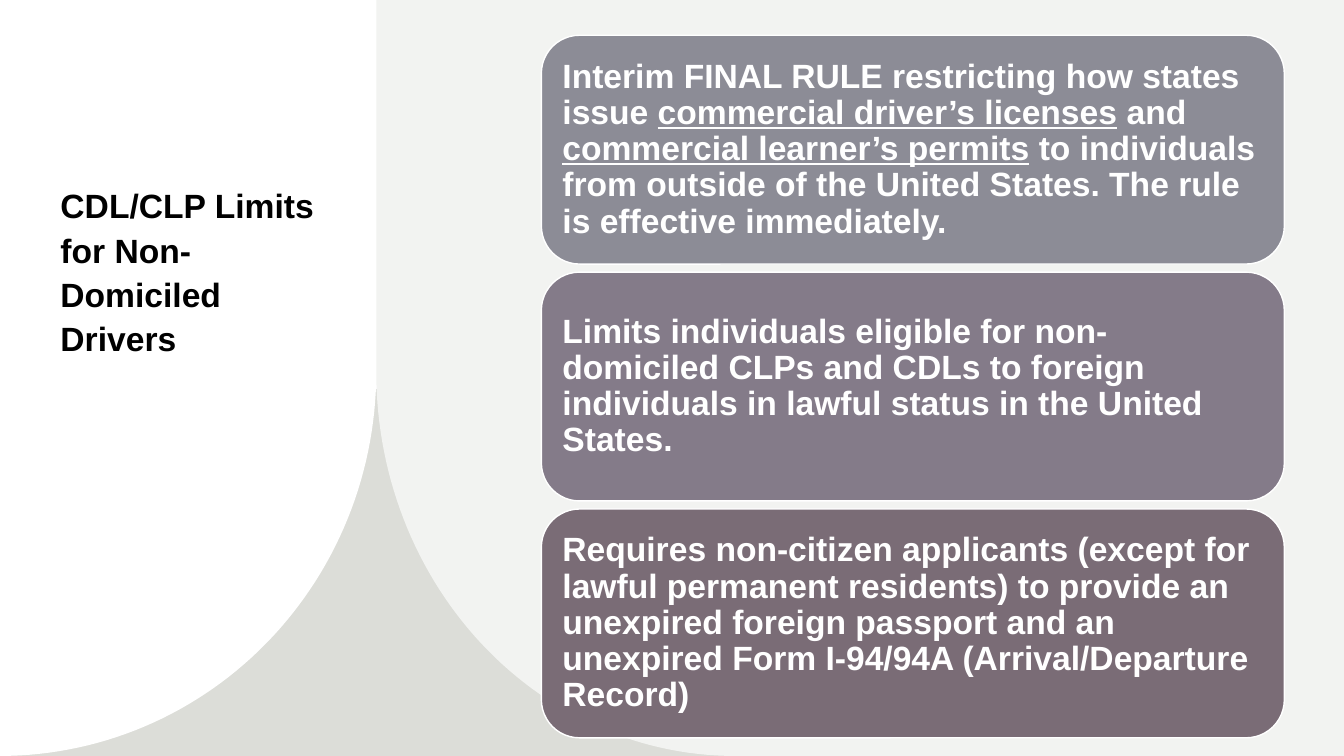
import math
from dataclasses import dataclass

import pptx
import pptx.dml.color
import pptx.enum.shapes
import pptx.enum.text
import pptx.util

COLUMNS, ROWS = 25, 15
PAGE_WIDTH = pptx.util.Inches(13.33)
PAGE_HEIGHT = pptx.util.Inches(7.5)
COLORS = {
    "white": "FFFFFF", "black": "000000", "stone": "DCDDD8", "mist": "F2F3F1",
    "slate": "8C8C96", "mauve": "847B89", "plum": "7A6C76",
}
SPLIT, BEND = 7, 7.38
CURVE_STEPS = 60
CARD_LEFT, CARD_TOP, CARD_WIDTH, CARD_HEIGHT, CARD_PITCH = 10.07, 0.7, 13.82, 4.54, 4.7
INSET = pptx.util.Inches(0.1)
SHAPES = pptx.enum.shapes.MSO_SHAPE
ANCHORS = pptx.enum.text.MSO_ANCHOR
FONT_FORMAT = {"name": "Arial", "size": pptx.util.Pt(24), "bold": True}
TITLE_FORMAT = {"word_wrap": True, "vertical_anchor": ANCHORS.TOP}
CARD_FORMAT = {
    "word_wrap": True, "vertical_anchor": ANCHORS.MIDDLE,
    "margin_left": INSET, "margin_right": INSET,
    "margin_top": INSET, "margin_bottom": INSET,
}


@dataclass(frozen=True)
class Area:
    column: float
    row: float
    columns: float
    rows: float


@dataclass(frozen=True)
class Span:
    text: str
    underline: bool = False


@dataclass(frozen=True)
class Card:
    color: str
    spans: tuple[Span, ...]


CARDS = (
    Card("slate", (
        Span("Interim FINAL RULE restricting how states issue "),
        Span("commercial driver’s licenses", True),
        Span(" and "),
        Span("commercial learner’s permits", True),
        Span(" to individuals from outside of the United States. "
             "The rule is effective immediately."),
    )),
    Card("mauve", (
        Span("Limits individuals eligible for non-domiciled CLPs and CDLs to "
             "foreign individuals in lawful status in the United States."),
    )),
    Card("plum", (
        Span("Requires non-citizen applicants (except for lawful permanent "
             "residents) to provide an unexpired foreign passport and an "
             "unexpired Form I-94/94A (Arrival/Departure Record)"),
    )),
)


def across(columns: float) -> int:
    return round(PAGE_WIDTH * columns / COLUMNS)


def down(rows: float) -> int:
    return round(PAGE_HEIGHT * rows / ROWS)


def place(area: Area) -> tuple[int, int, int, int]:
    return across(area.column), down(area.row), across(area.columns), down(area.rows)


def rgb(color: str) -> pptx.dml.color.RGBColor:
    return pptx.dml.color.RGBColor.from_string(COLORS[color])


def apply(target: object, values: dict) -> None:
    for name, value in values.items():
        setattr(target, name, value)


def paint(shape, color: str) -> None:
    shape.shadow.inherit = False
    shape.fill.solid()
    shape.fill.fore_color.rgb = rgb(color)
    shape.line.fill.background()


def write(frame, spans: tuple[Span, ...], color: str, spacing: float, values: dict) -> None:
    apply(frame, values)
    para = frame.paragraphs[0]
    apply(para, {"alignment": pptx.enum.text.PP_ALIGN.LEFT, "line_spacing": spacing})
    for span in spans:
        run = para.add_run()
        run.text = span.text
        apply(run.font, FONT_FORMAT | {"underline": span.underline})
        run.font.color.rgb = rgb(color)


def add_block(page, kind, area: Area, color: str):
    block = page.shapes.add_shape(kind, *place(area))
    paint(block, color)
    return block


def add_curved_panel(page, edge: float, foot: float, color: str) -> None:
    points = [(edge, 0), (SPLIT, 0)]
    for step in range(CURVE_STEPS + 1):
        angle = math.pi / 2 * step / CURVE_STEPS
        points.append((
            foot + (SPLIT - foot) * math.cos(angle),
            BEND + (ROWS - BEND) * math.sin(angle),
        ))
    points.append((edge, ROWS))
    corners = [(across(column), down(row)) for column, row in points]
    builder = page.shapes.build_freeform(*corners[0], scale=1.0)
    builder.add_line_segments(corners[1:], close=True)
    paint(builder.convert_to_shape(), color)


def add_card(page, index: int, card: Card) -> None:
    area = Area(CARD_LEFT, CARD_TOP + index * CARD_PITCH, CARD_WIDTH, CARD_HEIGHT)
    box = add_block(page, SHAPES.ROUNDED_RECTANGLE, area, card.color)
    box.line.color.rgb = rgb("white")
    box.line.width = pptx.util.Pt(1)
    write(box.text_frame, card.spans, "white", 0.9, CARD_FORMAT)


def main() -> None:
    deck = pptx.Presentation()
    apply(deck, {"slide_width": PAGE_WIDTH, "slide_height": PAGE_HEIGHT})
    page = deck.slides.add_slide(deck.slide_layouts[6])

    add_block(page, SHAPES.RECTANGLE, Area(0, 0, COLUMNS, ROWS), "white")
    add_block(page, SHAPES.RECTANGLE, Area(0, 7.72, 13.82, 7.28), "stone")
    add_curved_panel(page, 0, 0, "white")
    title = page.shapes.add_textbox(*place(Area(0.94, 3.5, 5.53, 5.46)))
    heading = (Span("CDL/CLP Limits for Non-Domiciled Drivers"),)
    write(title.text_frame, heading, "black", 1.1, TITLE_FORMAT)
    add_curved_panel(page, COLUMNS, 13.67, "mist")
    for index, card in enumerate(CARDS):
        add_card(page, index, card)

    deck.save("out.pptx")


if __name__ == "__main__":
    main()
